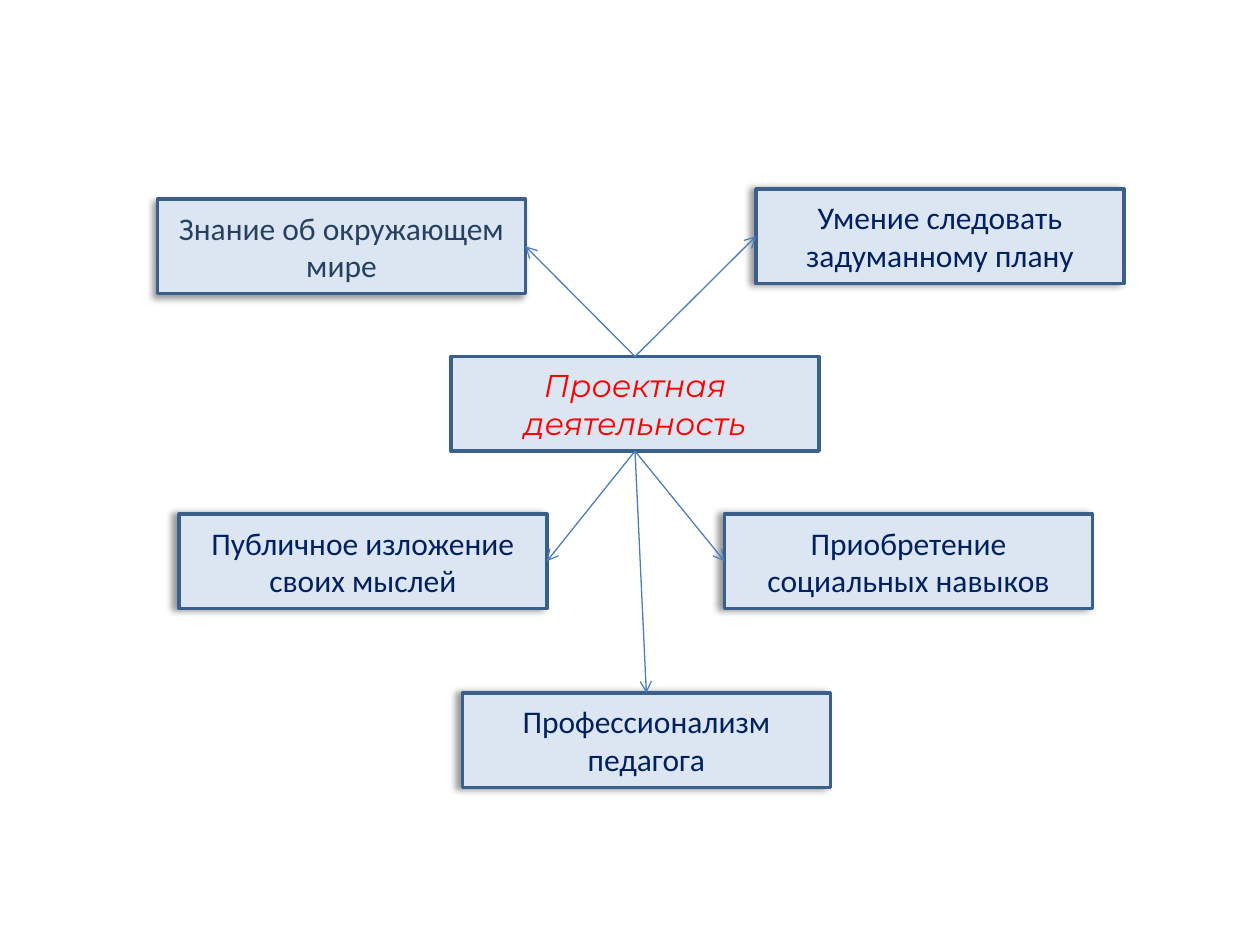
from lxml import etree
from pptx import Presentation
from pptx.dml.color import RGBColor
from pptx.enum import shapes, text
from pptx.oxml import ns
from pptx.util import Inches, Pt

BOX_FILL = RGBColor(0xDC, 0xE6, 0xF2)
BOX_LINE = RGBColor(0x3A, 0x5F, 0x8C)
ARROW = RGBColor(0x4B, 0x7E, 0xBC)
RED = RGBColor(0xFF, 0x00, 0x00)
NAVY = RGBColor(0x00, 0x20, 0x60)
SLATE = RGBColor(0x25, 0x40, 0x61)

BOX_WIDTH, BOX_HEIGHT = Inches(2.92), Inches(0.75)
TOP, LEFT, BOTTOM, RIGHT = range(4)

# Offset from the centre box, text, text colour, shadow angle,
# side of the centre box and side of the outer box joined by the arrow
OUTCOMES = [
    (2.17, 1.25, "Приобретение социальных навыков", NAVY, 180, BOTTOM, LEFT),
    (-2.16, 1.25, "Публичное изложение своих мыслей", NAVY, 180, BOTTOM, RIGHT),
    (-2.33, -1.25, "Знание об окружающем мире", SLATE, 135, TOP, RIGHT),
    (0.09, 2.67, "Профессионализм педагога", NAVY, 180, BOTTOM, TOP),
    (2.42, -1.33, "Умение следовать задуманному плану", NAVY, 180, TOP, LEFT),
]


def add_box(slide, left, top, label, color, font_name="Calibri"):
    box = slide.shapes.add_shape(
        shapes.MSO_SHAPE.RECTANGLE, left, top, BOX_WIDTH, BOX_HEIGHT)
    box.shadow.inherit = False
    box.fill.solid()
    box.fill.fore_color.rgb = BOX_FILL
    box.line.color.rgb = BOX_LINE
    box.line.width = Pt(2)
    frame = box.text_frame
    frame.word_wrap = True
    frame.vertical_anchor = text.MSO_ANCHOR.MIDDLE
    frame.text = label
    paragraph = frame.paragraphs[0]
    paragraph.alignment = text.PP_ALIGN.CENTER
    font = paragraph.runs[0].font
    font.name = font_name
    font.size = Pt(18)
    font.color.rgb = color
    return box


def add_shadow(box, angle):
    """Give the box a soft black shadow cast at the angle in degrees."""
    effects = box._element.spPr.find(ns.qn("a:effectLst"))
    shadow = etree.SubElement(
        effects, ns.qn("a:outerShdw"), blurRad=str(Pt(4)), dist=str(Pt(3)),
        dir=str(angle * 60000), algn="ctr", rotWithShape="0")
    color = etree.SubElement(shadow, ns.qn("a:srgbClr"), val="000000")
    etree.SubElement(color, ns.qn("a:alpha"), val="40000")


def add_arrow(slide, start, start_side, end, end_side):
    arrow = slide.shapes.add_connector(
        shapes.MSO_CONNECTOR.STRAIGHT, 0, 0, 0, 0)
    arrow.begin_connect(start, start_side)
    arrow.end_connect(end, end_side)
    arrow.line.color.rgb = ARROW
    arrow.line.width = Pt(0.75)
    etree.SubElement(arrow.line._get_or_add_ln(), ns.qn("a:tailEnd"), type="arrow")
    etree.SubElement(arrow._element.spPr, ns.qn("a:effectLst"))


def add_outcome_map(slide, left, top):
    """Place the centre box at left, top and its outcomes around it."""
    center = add_box(slide, left, top, "Проектная деятельность", RED, "Montserrat")
    center.text_frame.paragraphs[0].runs[0].font.italic = True
    links = []
    for dx, dy, label, color, angle, center_side, outcome_side in OUTCOMES:
        box = add_box(slide, left + Inches(dx), top + Inches(dy), label, color)
        add_shadow(box, angle)
        links.append((center_side, box, outcome_side))
    for center_side, box, outcome_side in links:
        add_arrow(slide, center, center_side, box, outcome_side)


def main():
    presentation = Presentation()
    presentation.slide_width = Inches(10)
    presentation.slide_height = Inches(7.5)
    slide = presentation.slides.add_slide(presentation.slide_layouts[6])
    add_outcome_map(slide, Inches(3.58), Inches(2.83))
    presentation.save("out.pptx")


if __name__ == "__main__":
    main()
